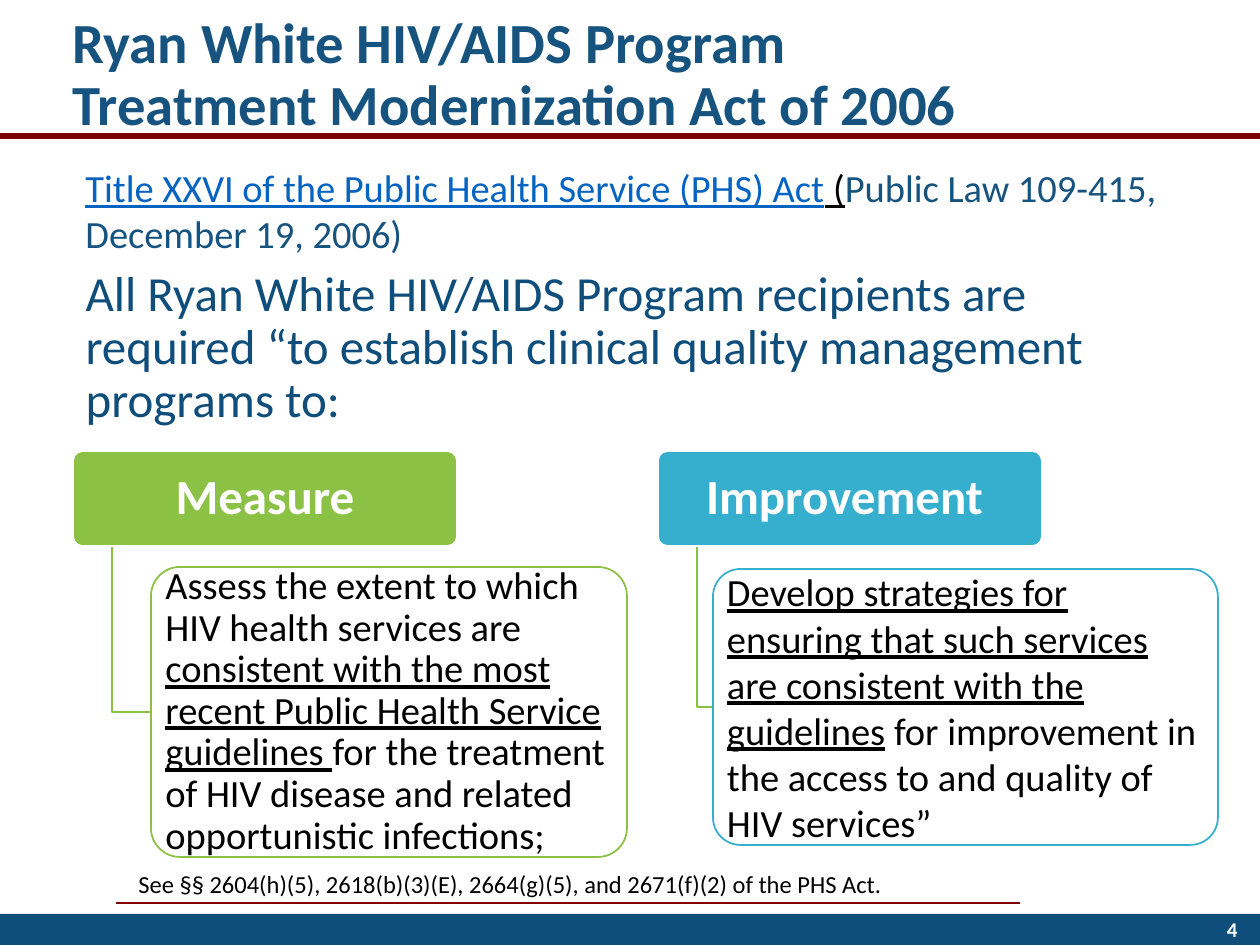
from dataclasses import dataclass

from lxml import etree
from pptx import Presentation
from pptx.dml.color import RGBColor
from pptx.enum.shapes import MSO_CONNECTOR, MSO_SHAPE
from pptx.enum.text import MSO_ANCHOR, PP_ALIGN
from pptx.oxml.ns import qn
from pptx.util import Pt

PX = 914400 / 126
LEFT, MID, RIGHT = PP_ALIGN.LEFT, PP_ALIGN.CENTER, PP_ALIGN.RIGHT
CENTRE, TOP = MSO_ANCHOR.MIDDLE, MSO_ANCHOR.TOP
RECT, ROUND = MSO_SHAPE.RECTANGLE, MSO_SHAPE.ROUNDED_RECTANGLE
STRAIGHT = MSO_CONNECTOR.STRAIGHT


@dataclass(frozen=True)
class Theme:
    font: str = "Calibri"
    navy: str = "0F4D7B"
    title: str = "16537F"
    link: str = "0563C1"
    red: str = "800000"
    green: str = "8BC145"
    blue: str = "36AFCE"
    white: str = "FFFFFF"
    black: str = "000000"
    big: float = 32.4
    lead: int = 28
    text: int = 22
    note: int = 14
    page: int = 12


T = Theme()


def px(*vals):
    return [round(v * PX) for v in vals]


def rgb(code):
    return RGBColor.from_string(code)


def place(shape, box):
    shape.left, shape.top, shape.width, shape.height = px(*box)


def write(shape, runs, size, align=LEFT, anchor=TOP, gap=1.0, bold=False):
    """Fill one paragraph with runs of (text, colour, underline)."""
    frame = shape.text_frame
    frame.word_wrap = True
    frame.vertical_anchor = anchor
    para = frame.paragraphs[0]
    para.alignment, para.line_spacing = align, gap
    para.space_before = Pt(0)
    for text, color, under in runs:
        for i, line in enumerate(text.split("\n")):
            if i:
                para.add_line_break()
            run = para.add_run()
            run.text = line
            font = run.font
            font.name, font.size, font.bold = T.font, Pt(size), bold
            font.underline = under
            font.color.rgb = rgb(color)


def block(slide, kind, box, fill, line=None):
    shape = slide.shapes.add_shape(kind, *px(*box))
    shape.shadow.inherit = False
    shape.fill.solid()
    shape.fill.fore_color.rgb = rgb(fill)
    if line:
        shape.line.color.rgb = rgb(line)
        shape.line.width = Pt(1)
    else:
        shape.line.fill.background()
    return shape


def panel(slide, box, fill, line, pad):
    """Draw a rounded box with the given side and top padding."""
    shape = block(slide, ROUND, box, fill, line)
    shape.adjustments[0] = 0.1
    frame = shape.text_frame
    frame.margin_left = frame.margin_right = px(pad[0])[0]
    frame.margin_top = frame.margin_bottom = px(pad[1])[0]
    return shape


def rule(slide, x, y, width, weight):
    line = slide.shapes.add_connector(STRAIGHT, *px(x, y, x + width, y))
    line.line.color.rgb = rgb(T.red)
    line.line.width = Pt(weight)
    etree.SubElement(line._element.spPr, qn("a:effectLst"))


def note(slide, box, runs, size, **style):
    shape = slide.shapes.add_textbox(*px(*box))
    write(shape, runs, size, **style)


def header(slide, box):
    x, y, width, height = box
    title = slide.shapes.title
    place(title, (x + 60, y + 18, 1086, 116))
    write(title, [("Ryan White HIV/AIDS Program\n"
                   "Treatment Modernization Act of 2006", T.title, False)],
          T.big, anchor=CENTRE, gap=0.9, bold=True)
    rule(slide, x, y + height, width, 3)


def intro(slide, box):
    x, y, width, height = box
    note(slide, (x, y, width, 106), [
        ("Title XXVI of the Public Health Service (PHS) Act", T.link, True),
        (" (", T.black, True),
        ("Public Law 109-415, December 19, 2006)", T.title, False)], T.text)
    body = slide.placeholders[1]
    place(body, (x, y + 105, 1134, height - 105))
    props = body.text_frame.paragraphs[0]._p.get_or_add_pPr()
    props.set("marL", "0")
    props.set("indent", "0")
    etree.SubElement(props, qn("a:buNone"))
    write(body, [("All Ryan White HIV/AIDS Program recipients are required “to "
                  "establish clinical quality management programs to:",
                  T.navy, False)], T.lead, gap=0.9)


def branch(slide, spot, card, color, head, runs, gap):
    """Draw a heading at spot and hang a card from it; card is an offset box."""
    x, y = spot
    dx, dy, width, height = card
    stem, mid = x + 39, y + dy + height / 2
    build = slide.shapes.build_freeform(*px(stem, y + 95), scale=1.0)
    build.add_line_segments([px(stem, mid), px(x + dx, mid)], close=False)
    elbow = build.convert_to_shape()
    elbow.shadow.inherit = False
    elbow.fill.background()
    elbow.line.color.rgb = rgb(T.green)
    elbow.line.width = Pt(1)
    top = panel(slide, (x, y, 384, 95), color, T.white, (8, 5))
    write(top, [(head, T.white, False)], T.lead, MID, CENTRE, 0.9, True)
    hung = panel(slide, (x + dx, y + dy, width, height), T.white, color, (6, 4))
    write(hung, runs, T.text, anchor=CENTRE, gap=gap)


def footer(slide, box):
    x, y, width, height = box
    note(slide, (x + 126, y - 51, 872, 43), [
        ("See §§ 2604(h)(5), 2618(b)(3)(E), 2664(g)(5), and 2671(f)(2) "
         "of the PHS Act.", T.black, False)], T.note)
    rule(slide, x + 116, y - 11, 904, 1.5)
    block(slide, RECT, box, T.navy)
    note(slide, (x + width - 294, y - 10, 284, 50), [("4", T.white, False)],
         T.page, align=RIGHT, anchor=CENTRE, bold=True)


def main():
    deck = Presentation()
    deck.slide_width, deck.slide_height = px(1260, 945)
    slide = deck.slides.add_slide(deck.slide_layouts[1])
    header(slide, (0, 0, 1260, 136))
    intro(slide, (73, 158, 1155, 569))
    branch(slide, (73, 451), (78, 116, 476, 290), T.green, "Measure", [
        ("Assess the extent to which HIV health services are ", T.black, False),
        ("consistent with the most recent Public Health Service guidelines ",
         T.black, True),
        ("for the treatment of HIV disease and related opportunistic "
         "infections;", T.black, False)], 0.9)
    branch(slide, (658, 451), (55, 118, 505, 276), T.blue, "Improvement ", [
        ("Develop strategies for ensuring that such services are consistent "
         "with the guidelines", T.black, True),
        (" for improvement in the access to and quality of HIV services”",
         T.black, False)], 1.0)
    footer(slide, (0, 914, 1260, 31))
    deck.save("out.pptx")


if __name__ == "__main__":
    main()
